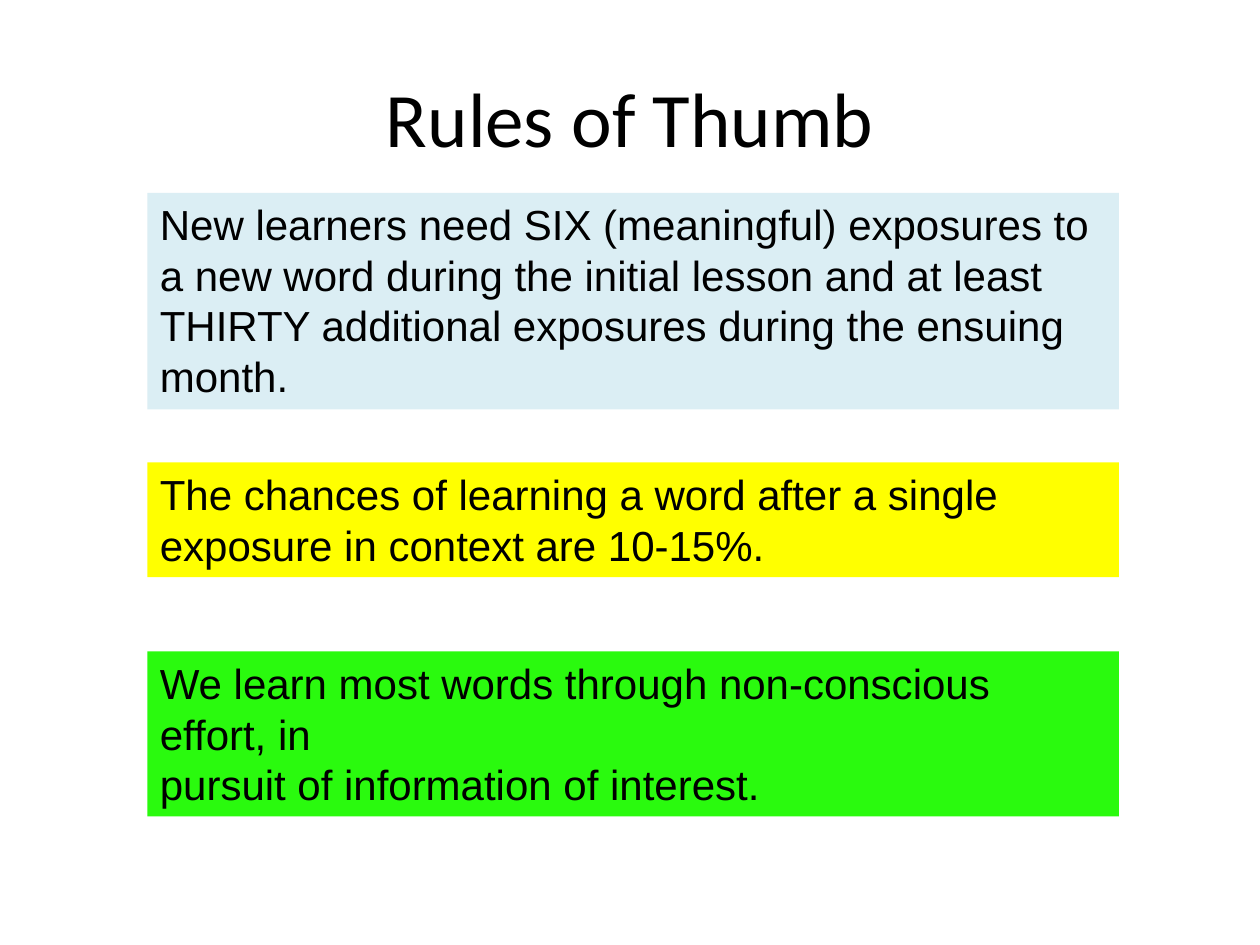
from pptx import Presentation
from pptx import util as u
from pptx.dml import color
from pptx.enum import text

WIDTH, HEIGHT = u.Inches(10), u.Inches(7.5)
COLUMNS, ROWS = 100, 75
RULE_LEFT, RULE_WIDTH = 11.7, 77.1
RULES = [
    (15.3, 17.2, "DBEEF4",
     "New learners need SIX (meaningful) exposures to a new word during the initial lesson and at least\n"
     "THIRTY additional exposures during the ensuing month."),
    (36.7, 9.1, "FFFF00",
     "The chances of learning a word after a single exposure in context are 10-15%."),
    (51.7, 13.1, "2AFA0E",
     "We learn most words through non-conscious effort, in\n"
     "pursuit of information of interest."),
]


def paint(target, value):
    target.rgb = color.RGBColor.from_string(value)


def grid_box(left, top, width, height):
    column, row = WIDTH / COLUMNS, HEIGHT / ROWS
    return [round(n) for n in (left * column, top * row, width * column, height * row)]


def write(shape, words, font, size, align, anchor):
    frame = shape.text_frame
    frame.word_wrap = True
    frame.vertical_anchor = anchor
    frame.text = words
    for para in frame.paragraphs:
        para.alignment = align
        for span in para.runs:
            span.font.name = font
            span.font.size = u.Pt(size)
            paint(span.font.color, "000000")


def add_title(page, box, words):
    title = page.shapes.add_textbox(*box)
    write(title, words, "Calibri", 44, text.PP_ALIGN.CENTER, text.MSO_ANCHOR.MIDDLE)


def add_rule(page, box, fill, words):
    panel = page.shapes.add_textbox(*box)
    panel.fill.solid()
    paint(panel.fill.fore_color, fill)
    write(panel, words, "Arial", 24, text.PP_ALIGN.LEFT, text.MSO_ANCHOR.TOP)
    panel.text_frame.auto_size = text.MSO_AUTO_SIZE.SHAPE_TO_FIT_TEXT


def main():
    deck = Presentation()
    deck.slide_width, deck.slide_height = WIDTH, HEIGHT
    page = deck.slides.add_slide(deck.slide_layouts[6])
    add_title(page, grid_box(5, 3, 90, 12.5), "Rules of Thumb")
    for top, height, fill, words in RULES:
        add_rule(page, grid_box(RULE_LEFT, top, RULE_WIDTH, height), fill, words)
    deck.save("out.pptx")


if __name__ == "__main__":
    main()
